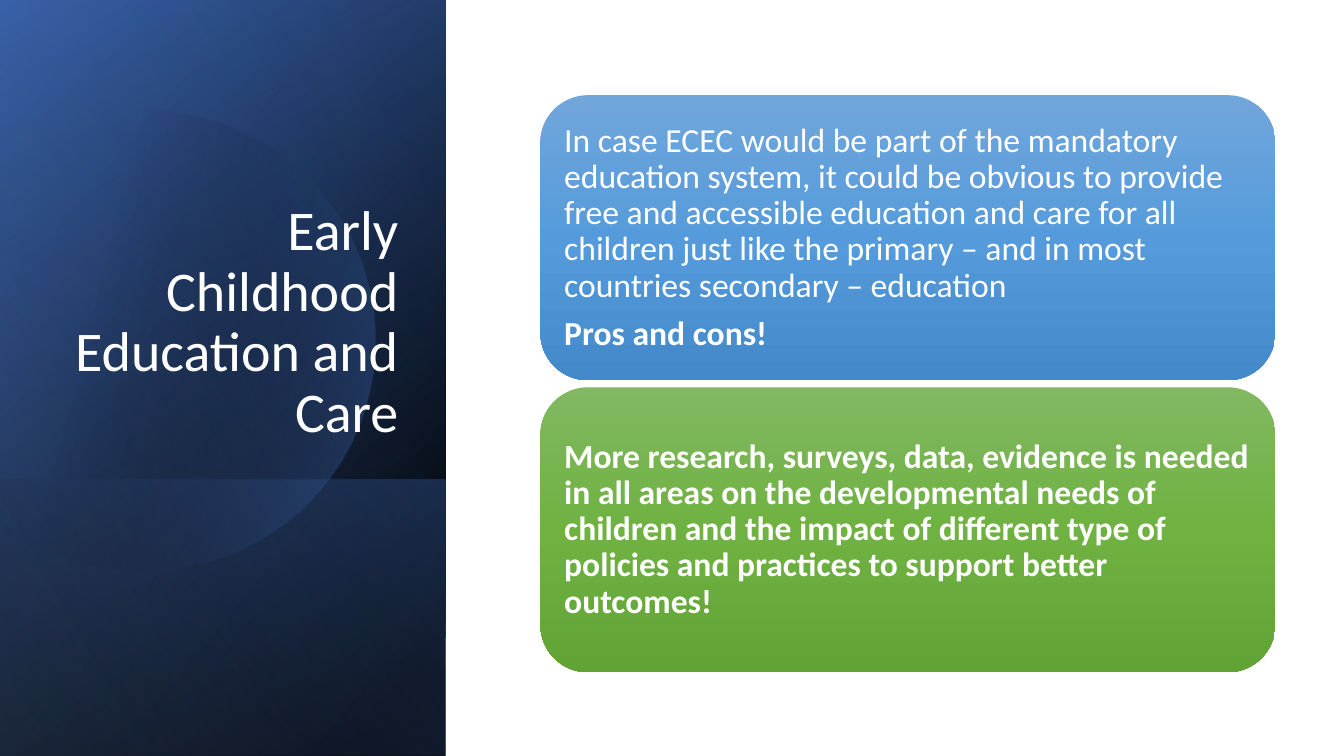
from math import acos, cos, pi, sin

from pptx import Presentation
from pptx.dml.color import RGBColor
from pptx.enum.shapes import MSO_SHAPE
from pptx.enum.text import MSO_ANCHOR, MSO_AUTO_SIZE, PP_ALIGN
from pptx.oxml import parse_xml
from pptx.oxml.ns import nsdecls, qn
from pptx.util import Cm, Pt


def set_gradient(shape, stops, angle):
    """Fill with (position %, colour, opacity %) stops; no line, no shadow."""
    stop_xml = "".join(
        f'<a:gs pos="{position * 1000}"><a:srgbClr val="{color}">'
        f'<a:alpha val="{opacity * 1000}"/></a:srgbClr></a:gs>'
        for position, color, opacity in stops)
    gradient = parse_xml(
        f'<a:gradFill {nsdecls("a")} rotWithShape="1"><a:gsLst>{stop_xml}</a:gsLst>'
        f'<a:lin ang="{round(angle * 60000)}" scaled="0"/></a:gradFill>')
    shape.fill.background()
    properties = shape._element.spPr
    properties.replace(properties.find(qn("a:noFill")), gradient)
    shape.line.fill.background()
    shape.shadow.inherit = False


def add_text(paragraph, text, size, bold=False):
    paragraph.line_spacing = 0.9
    run = paragraph.add_run()
    run.text = text
    run.font.name = "Calibri"
    run.font.size = Pt(size)
    run.font.bold = bold
    run.font.color.rgb = RGBColor.from_string("FFFFFF")


SLIDE_HEIGHT = 19.05
PANEL_WIDTH = 11.23

presentation = Presentation()
presentation.slide_width = Cm(33.87)
presentation.slide_height = Cm(SLIDE_HEIGHT)
slide = presentation.slides.add_slide(presentation.slide_layouts[5])
shapes = slide.shapes

# Left panel: bands turned by 90 degrees, with a clipped circle below the last
CIRCLE = "circle"
LOWER_BAND = 6.96
panel_layers = [
    (SLIDE_HEIGHT, [(8, "000000", 100), (100, "2F5597", 100)], 50),
    (SLIDE_HEIGHT, [(0, "000000", 0), (99, "4472C4", 46)], 30),
    (LOWER_BAND, [(2, "4472C4", 29), (100, "000000", 30)], 130),
    (CIRCLE, [(29, "000000", 0), (100, "4472C4", 43)], 13.9),
    (SLIDE_HEIGHT, [(0, "000000", 0), (99, "8FAADC", 11)], 120),
]
center_x, center_y, radius = 3.68, 8.59, 5.79
edge_angle = acos(-center_x / radius)
arc_steps = 120

for band_height, stops, angle in panel_layers:
    if band_height == CIRCLE:
        turns = [edge_angle * (2 * step / arc_steps - 1) for step in range(arc_steps + 1)]
        points = [(Cm(center_x + radius * cos(turn)), Cm(center_y + radius * sin(turn)))
                  for turn in turns]
        builder = shapes.build_freeform(*points[0])
        builder.add_line_segments(points[1:], close=True)
        layer = builder.convert_to_shape()
    else:
        band_center = SLIDE_HEIGHT - band_height / 2
        layer = shapes.add_shape(
            MSO_SHAPE.RECTANGLE,
            Cm((PANEL_WIDTH - band_height) / 2), Cm(band_center - PANEL_WIDTH / 2),
            Cm(band_height), Cm(PANEL_WIDTH))
        layer.rotation = 90
        layer._element.spPr.find(qn("a:xfrm")).set("flipH", "1")
    set_gradient(layer, stops, angle)

# Title, brought in front of the panel
title = shapes.title
title._element.getparent().append(title._element)
title.left, title.top, title.width, title.height = Cm(1.63), Cm(4.67), Cm(8.66), Cm(6.65)
title_frame = title.text_frame
title_frame.word_wrap = True
title_frame.auto_size = MSO_AUTO_SIZE.NONE
title_frame.vertical_anchor = MSO_ANCHOR.BOTTOM
title_frame.paragraphs[0].alignment = PP_ALIGN.RIGHT
add_text(title_frame.paragraphs[0], "Early Childhood Education and Care", 40)

# Cards: gradient colours and (text, bold) paragraphs
cards = [
    (("71A6DB", "559BDB", "448ACA"), [
        ("In case ECEC would be part of the mandatory education system, it could be "
         "obvious to provide free and accessible education and care for all children "
         "just like the primary – and in most countries secondary – education", False),
        ("Pros and cons!", True)]),
    (("81B861", "6FB242", "62A336"), [
        ("More research, surveys, data, evidence is needed in all areas on the "
         "developmental needs of children and the impact of different type of policies "
         "and practices to support better outcomes!", True)]),
]
for index, (colors, texts) in enumerate(cards):
    card = shapes.add_shape(MSO_SHAPE.ROUNDED_RECTANGLE, Cm(13.62), Cm(2.4 + 7.36 * index),
                            Cm(18.52), Cm(7.18))
    set_gradient(card, [(50 * i, color, 100) for i, color in enumerate(colors)], 90)
    frame = card.text_frame
    frame.word_wrap = True
    frame.vertical_anchor = MSO_ANCHOR.MIDDLE
    frame.margin_left = frame.margin_right = Cm(0.25)
    frame.margin_top = frame.margin_bottom = Cm(0.25)
    for number, (text, bold) in enumerate(texts):
        paragraph = frame.add_paragraph() if number else frame.paragraphs[0]
        paragraph.alignment = PP_ALIGN.LEFT
        paragraph.space_after = Pt(8.4)
        add_text(paragraph, text, 24, bold)

presentation.save("out.pptx")
